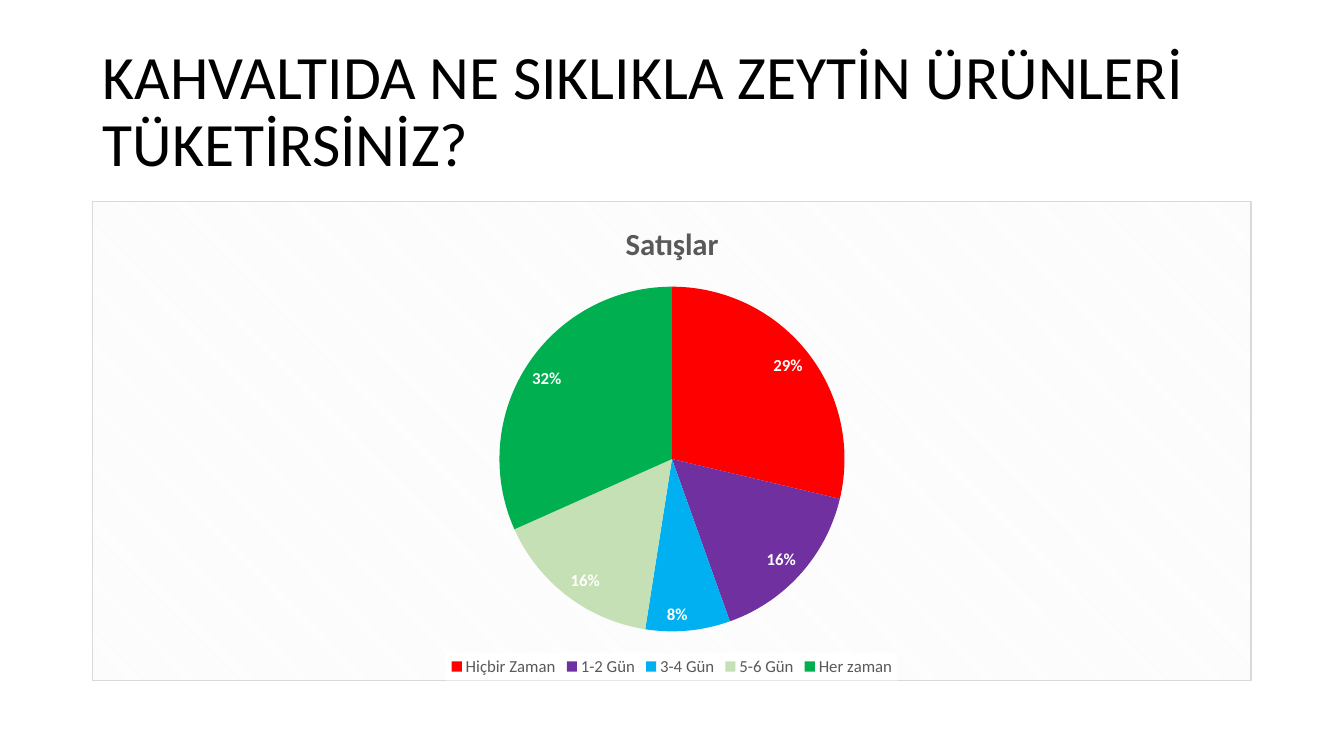
from dataclasses import dataclass

from lxml import etree
from pptx import Presentation
from pptx.chart.data import CategoryChartData
from pptx.dml.color import RGBColor
from pptx.enum.chart import XL_CHART_TYPE, XL_LABEL_POSITION, XL_LEGEND_POSITION
from pptx.enum.text import MSO_ANCHOR, MSO_AUTO_SIZE, PP_ALIGN
from pptx.oxml import parse_xml
from pptx.oxml.ns import nsdecls, qn
from pptx.util import Cm, Pt


@dataclass(frozen=True)
class Theme:
    font: str = "Calibri"
    ink: str = "000000"
    muted: str = "595959"
    paper: str = "FFFFFF"
    hatch: str = "F2F2F2"
    border: str = "D9D9D9"
    title_size: int = 44
    chart_title_size: int = 22
    label_size: int = 12


FREQUENCIES = [
    ("Hiçbir Zaman", 29, "FF0000"),
    ("1-2 Gün", 16, "7030A0"),
    ("3-4 Gün", 8, "00B0F0"),
    ("5-6 Gün", 16, "C5E0B4"),
    ("Her zaman", 32, "00B050"),
]


def format_font(font, name, size, color, bold=False):
    font.name, font.size, font.bold = name, Pt(size), bold
    font.color.rgb = RGBColor.from_string(color)


def write_text(tf, text, align=PP_ALIGN.LEFT, spacing=1.0, **font_format):
    p = tf.paragraphs[0]
    p.alignment, p.line_spacing = align, spacing
    r = p.add_run()
    r.text = text
    format_font(r.font, **font_format)


def chart_properties(content):
    return parse_xml(f'<c:spPr {nsdecls("c", "a")}>{content}</c:spPr>')


class SlideBuilder:
    def __init__(self, prs, theme):
        self.theme = theme
        self.s = prs.slides.add_slide(prs.slide_layouts[5])

    def title(self, text, left, top, width, height):
        t, sp = self.theme, self.s.shapes.title
        sp.left, sp.top, sp.width, sp.height = left, top, width, height
        tf = sp.text_frame
        tf.word_wrap = True
        tf.auto_size = MSO_AUTO_SIZE.NONE
        tf.vertical_anchor = MSO_ANCHOR.MIDDLE
        write_text(tf, text, spacing=0.9, name=t.font, size=t.title_size, color=t.ink)

    def pie(self, name, rows, left, top, width, height):
        t = self.theme
        data = CategoryChartData()
        data.categories = [category for category, _, _ in rows]
        data.add_series(name, [value for _, value, _ in rows])
        chart = self.s.shapes.add_chart(
            XL_CHART_TYPE.PIE, left, top, width, height, data).chart
        format_font(chart.font, t.font, 10, t.ink)

        # Chart title
        chart.has_title = True
        write_text(chart.chart_title.text_frame, name, align=PP_ALIGN.CENTER,
                   name=t.font, size=t.chart_title_size, color=t.muted, bold=True)
        chart.chart_title.include_in_layout = False

        # Slices
        plot = chart.plots[0]
        plot.vary_by_categories = True
        for i, (_, _, color) in enumerate(rows):
            fill = plot.series[0].points[i].format.fill
            fill.solid()
            fill.fore_color.rgb = RGBColor.from_string(color)

        # Percentage labels
        plot.has_data_labels = True
        labels = plot.data_labels
        labels.show_percentage, labels.show_value = True, False
        labels.number_format, labels.number_format_is_linked = "0%", False
        labels.position = XL_LABEL_POSITION.INSIDE_END
        format_font(labels.font, t.font, t.label_size, t.paper, bold=True)

        # Legend
        chart.has_legend = True
        chart.legend.position = XL_LEGEND_POSITION.BOTTOM
        chart.legend.include_in_layout = False
        format_font(chart.legend.font, t.font, t.label_size, t.muted)
        self.hatch_background(chart)

    def hatch_background(self, chart):
        t = self.theme
        root = chart.element
        paper = f'<a:solidFill><a:srgbClr val="{t.paper}"/></a:solidFill>'
        overlay = root.find(f'.//{qn("c:legend")}/{qn("c:overlay")}')
        overlay.addnext(chart_properties(paper))
        root.find(qn("c:chart")).addnext(chart_properties(
            f'<a:pattFill prst="dkDnDiag"><a:fgClr><a:srgbClr val="{t.hatch}"/></a:fgClr>'
            f'<a:bgClr><a:srgbClr val="{t.paper}"/></a:bgClr></a:pattFill>'
            f'<a:ln w="{Pt(0.75)}"><a:solidFill><a:srgbClr val="{t.border}"/>'
            '</a:solidFill></a:ln>'))
        # Square corners on the chart frame
        if root.find(qn("c:roundedCorners")) is None:
            corners = etree.Element(qn("c:roundedCorners"), val="0")
            date_system = root.find(qn("c:date1904"))
            if date_system is None:
                root.insert(0, corners)
            else:
                date_system.addnext(corners)


def main():
    prs = Presentation()
    prs.slide_width, prs.slide_height = Cm(33.87), Cm(19.05)
    slide = SlideBuilder(prs, Theme())
    left, width = Cm(2.33), Cm(29.21)
    slide.title("KAHVALTIDA NE SIKLIKLA ZEYTİN ÜRÜNLERİ TÜKETİRSİNİZ?",
                left, Cm(1.01), width, Cm(3.68))
    slide.pie("Satışlar", FREQUENCIES, left, Cm(5.07), width, Cm(12.09))
    prs.save("out.pptx")


if __name__ == "__main__":
    main()
